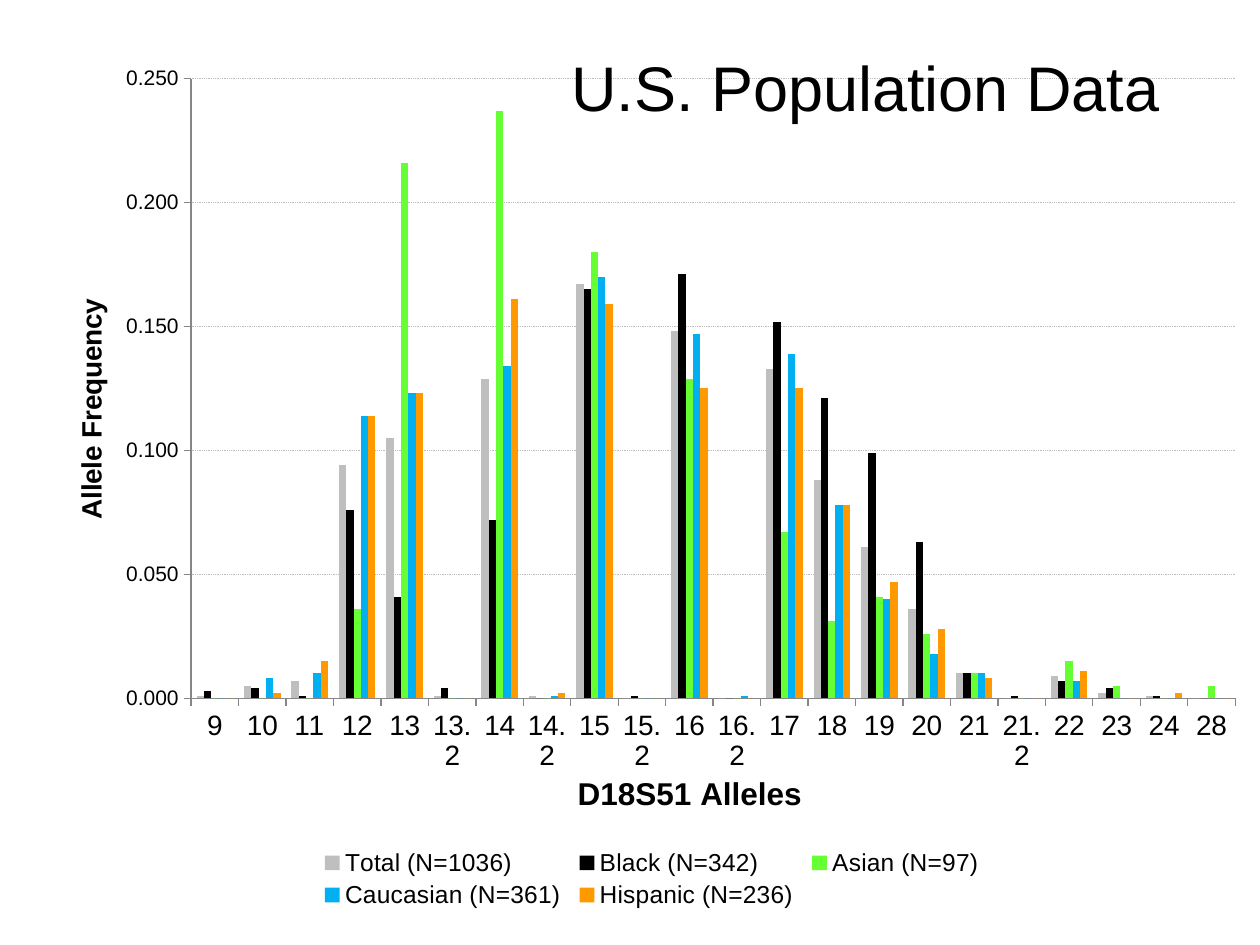
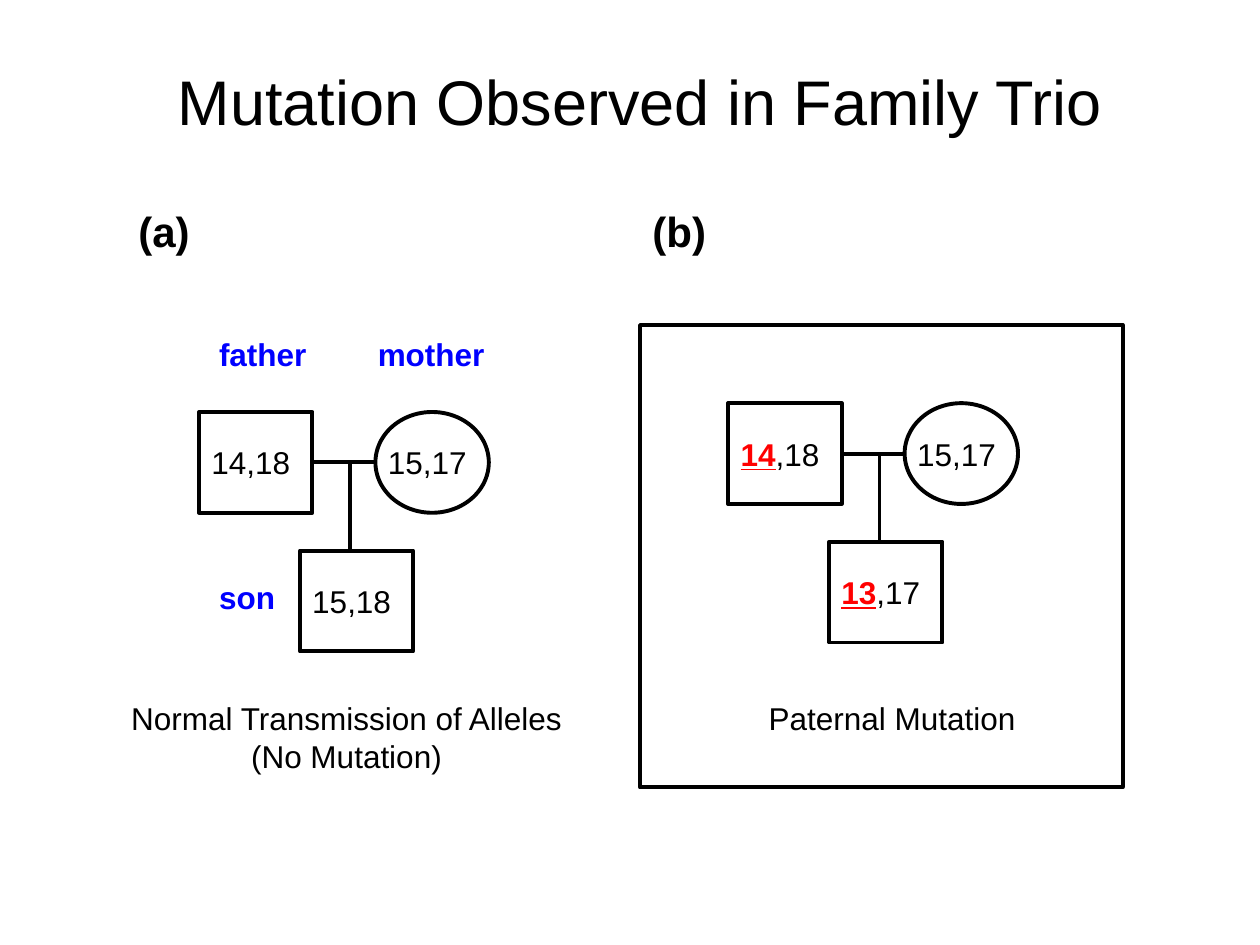
from lxml.etree import SubElement
from pptx import Presentation
from pptx.chart.data import CategoryChartData
from pptx.dml.color import RGBColor
from pptx.enum.chart import XL_CHART_TYPE as ChartType, XL_LEGEND_POSITION as LegendPosition
from pptx.enum.chart import XL_TICK_MARK as TickMark
from pptx.enum.dml import MSO_LINE as Dash
from pptx.enum.shapes import MSO_CONNECTOR as Connector, MSO_SHAPE as Shape
from pptx.enum.text import MSO_ANCHOR as Anchor, MSO_AUTO_SIZE as AutoSize, PP_ALIGN as Align
from pptx.oxml import parse_xml
from pptx.oxml.ns import nsdecls, qn
from pptx.util import Emu, Pt

PX = 9144  # 100 px to the inch
FONT = "Arial"
COLORS = {
    "ink": "000000", "relative": "0000FF", "mutation": "FF0000",
    "grid": "BFBFBF", "axis": "868686",
    "total": "BFBFBF", "black": "000000", "asian": "66FF33",
    "caucasian": "00B0F0", "hispanic": "FF9900",
}
TITLE = {"size": 36, "align": Align.CENTER, "anchor": Anchor.MIDDLE}
BODY = {"size": 18}
CAPTION = {"size": 18, "align": Align.CENTER, "grow": True}
RELATIVE = {"size": 18, "color": "relative", "bold": True, "wrap": False, "grow": True}
PANEL = {"size": 24, "bold": True, "wrap": False, "grow": True}

ALLELES = ["9", "10", "11", "12", "13", "13.2", "14", "14.2", "15", "15.2", "16",
           "16.2", "17", "18", "19", "20", "21", "21.2", "22", "23", "24", "28"]
POPULATIONS = [
    ("Total (N=1036)", "total",
     [0.001, 0.005, 0.007, 0.094, 0.105, 0.001, 0.129, 0.001, 0.167, 0, 0.148,
      0, 0.133, 0.088, 0.061, 0.036, 0.01, 0, 0.009, 0.002, 0.001, 0]),
    ("Black (N=342)", "black",
     [0.003, 0.004, 0.001, 0.076, 0.041, 0.004, 0.072, 0, 0.165, 0.001, 0.171,
      0, 0.152, 0.121, 0.099, 0.063, 0.01, 0.001, 0.007, 0.004, 0.001, 0]),
    ("Asian (N=97)", "asian",
     [0, 0, 0, 0.036, 0.216, 0, 0.237, 0, 0.18, 0, 0.129,
      0, 0.067, 0.031, 0.041, 0.026, 0.01, 0, 0.015, 0.005, 0, 0.005]),
    ("Caucasian (N=361)", "caucasian",
     [0, 0.008, 0.01, 0.114, 0.123, 0, 0.134, 0.001, 0.17, 0, 0.147,
      0.001, 0.139, 0.078, 0.04, 0.018, 0.01, 0, 0.007, 0, 0, 0]),
    ("Hispanic (N=236)", "hispanic",
     [0, 0.002, 0.015, 0.114, 0.123, 0, 0.161, 0.002, 0.159, 0, 0.125,
      0, 0.125, 0.078, 0.047, 0.028, 0.008, 0, 0.011, 0, 0.002, 0]),
]


def px(*lengths):
    return [Emu(length * PX) for length in lengths]


def rgb(name):
    return RGBColor.from_string(COLORS[name])


def style_font(font, size, color="ink", **values):
    values = {"name": FONT, "size": Pt(size), "bold": False, **values}
    for attribute, value in values.items():
        setattr(font, attribute, value)
    font.color.rgb = rgb(color)


def place_in_chart(parent, index, **fractions):
    """Give a chart part a manual layout, in fractions of the chart area."""
    for old_layout in parent.findall(qn("c:layout")):
        parent.remove(old_layout)
    layout = parse_xml(f"<c:layout {nsdecls('c')}><c:manualLayout/></c:layout>")
    settings = {"xMode": "edge", "yMode": "edge", **fractions}
    if parent.tag == qn("c:plotArea"):
        settings = {"layoutTarget": "inner", **settings}
    for tag, value in settings.items():
        SubElement(layout[0], qn(f"c:{tag}")).set("val", str(value))
    parent.insert(index, layout)


class Deck:
    def __init__(self, width, height):
        self.presentation = Presentation()
        self.presentation.slide_width, self.presentation.slide_height = px(width, height)
        self.slide = self.shapes = None

    def new_slide(self):
        self.slide = self.presentation.slides.add_slide(self.presentation.slide_layouts[6])
        self.shapes = self.slide.shapes

    def start_group(self):
        self.shapes = self.slide.shapes.add_group_shape().shapes

    def end_group(self):
        self.shapes = self.slide.shapes

    def text(self, box, content, size, color="ink", bold=False, align=Align.LEFT,
             anchor=Anchor.TOP, wrap=True, grow=False, mutated=""):
        """Add a text box; a mutated allele comes first, red and underlined."""
        frame = self.shapes.add_textbox(*px(*box)).text_frame
        frame.word_wrap = wrap
        frame.vertical_anchor = anchor
        frame.auto_size = AutoSize.SHAPE_TO_FIT_TEXT if grow else AutoSize.NONE
        paragraph = frame.paragraphs[0]
        paragraph.alignment = align
        if mutated:
            run = paragraph.add_run()
            run.text = mutated
            style_font(run.font, size, "mutation", bold=True, underline=True)
        run = paragraph.add_run()
        run.text = content
        style_font(run.font, size, color, bold=bold)

    def outline(self, kind, box):
        shape = self.shapes.add_shape(kind, *px(*box))
        shape.shadow.inherit = False
        shape.fill.background()
        shape.line.color.rgb = rgb("ink")
        shape.line.width = Pt(2.25)
        return shape

    def line(self, start, end, source=None):
        """Draw a straight line, joined to the right side of source if given."""
        connector = self.shapes.add_connector(Connector.STRAIGHT, *px(*start, *end))
        connector.line.color.rgb = rgb("ink")
        connector.line.width = Pt(2.25)
        if source is not None:
            connector.begin_connect(source, 3)
        SubElement(connector._element.spPr, qn("a:effectLst"))

    def axis(self, axis, title, title_size, label_size):
        axis.has_title = True
        frame = axis.axis_title.text_frame
        frame.text = title
        style_font(frame.paragraphs[0].runs[0].font, title_size, bold=True)
        style_font(axis.tick_labels.font, label_size)
        axis.major_tick_mark = TickMark.OUTSIDE
        axis.minor_tick_mark = TickMark.NONE
        axis.format.line.color.rgb = rgb("axis")
        axis.format.line.width = Pt(0.75)

    def column_chart(self, box, categories, series_rows, category_title, value_title):
        data = CategoryChartData(number_format="0.000")
        data.categories = categories
        for name, _, values in series_rows:
            data.add_series(name, values)
        chart = self.shapes.add_chart(ChartType.COLUMN_CLUSTERED, *px(*box), data).chart
        chart.has_title = False
        style_font(chart.font, 10)
        plot = chart.plots[0]
        plot.gap_width, plot.overlap, plot.vary_by_categories = 150, 0, False
        for series, (_, color, _) in zip(plot.series, series_rows):
            series.format.fill.solid()
            series.format.fill.fore_color.rgb = rgb(color)

        self.axis(chart.category_axis, category_title, 18, 16)
        value_axis = chart.value_axis
        self.axis(value_axis, value_title, 16, 12)
        scale = {"minimum_scale": 0, "maximum_scale": 0.25, "major_unit": 0.05}
        for attribute, value in scale.items():
            setattr(value_axis, attribute, value)
        value_axis.tick_labels.number_format = "0.000"
        value_axis.tick_labels.number_format_is_linked = False
        grid = value_axis.major_gridlines.format.line
        grid.color.rgb = rgb("grid")
        grid.width, grid.dash_style = Pt(0.5), Dash.ROUND_DOT

        chart.has_legend = True
        chart.legend.position = LegendPosition.BOTTOM
        chart.legend.include_in_layout = False
        style_font(chart.legend.font, 14)
        self.arrange_chart(chart.element)

    def arrange_chart(self, chart_space):
        """Place the chart parts and show every category label, level."""
        layouts = [
            ("//c:plotArea", 0, {"x": 0.13, "y": 0.03, "w": 0.85, "h": 0.72}),
            ("//c:legend", 1, {"x": 0.23, "y": 0.92, "w": 0.55, "h": 0.08}),
            ("//c:catAx/c:title", 1, {"x": 0.44, "y": 0.83}),
            ("//c:valAx/c:title", 1, {"x": 0.03, "y": 0.28}),
        ]
        for query, index, fractions in layouts:
            place_in_chart(chart_space.xpath(query)[0], index, **fractions)
        chart_space.xpath("//c:catAx/c:txPr/a:bodyPr")[0].set("rot", "0")
        skip = parse_xml(f'<c:tickLblSkip {nsdecls("c")} val="1"/>')
        chart_space.xpath("//c:catAx/c:noMultiLvlLbl")[0].addprevious(skip)

    def pedigree(self, left, top, father, mother, son):
        """Draw a family trio; each member is (mutated allele, remaining text)."""
        width, height = 90, 80
        middle = top + height // 2
        self.start_group()
        members = [(Shape.RECTANGLE, left, top, father),
                   (Shape.OVAL, left + 140, top, mother),
                   (Shape.RECTANGLE, left + 80, top + 110, son)]
        outlines = []
        for kind, x, y, (mutated, alleles) in members:
            outlines.append(self.outline(kind, (x, y, width, height)))
            self.text((x, y + 20, 110, 50), alleles, mutated=mutated, **BODY)
        self.line((left + width, middle), (left + 140, middle), outlines[0])
        self.line((left + 120, middle), (left + 120, top + 110))
        self.end_group()


def population_slide(deck):
    deck.new_slide()
    deck.column_chart((25, 42, 975, 683), ALLELES, POPULATIONS,
                      "D18S51 Alleles", "Allele Frequency")
    deck.text((433, 25, 508, 87), "U.S. Population Data", **TITLE)


def mutation_slide(deck):
    deck.new_slide()
    deck.text((58, 17, 900, 125), "Mutation Observed in Family Trio", **TITLE)
    deck.pedigree(158, 327, ("", "14,18"), ("", "15,17"), ("", "15,18"))
    deck.pedigree(578, 320, ("14", ",18"), ("", "15,17"), ("13", ",17"))
    deck.text((75, 550, 400, 70), "Normal Transmission of Alleles (No Mutation)", **CAPTION)
    deck.text((508, 550, 400, 40), "Paternal Mutation", **CAPTION)
    deck.outline(Shape.RECTANGLE, (508, 258, 383, 367))
    for name, left, top, width in [("father", 164, 261, 90), ("mother", 290, 261, 106),
                                   ("son", 164, 454, 65)]:
        deck.text((left, top, width, 40), name, **RELATIVE)
    for label, left, width in [("(a)", 100, 61), ("(b)", 508, 63)]:
        deck.text((left, 158, width, 50), label, **PANEL)


def main():
    deck = Deck(1000, 750)
    population_slide(deck)
    mutation_slide(deck)
    deck.presentation.save("out.pptx")


if __name__ == "__main__":
    main()
